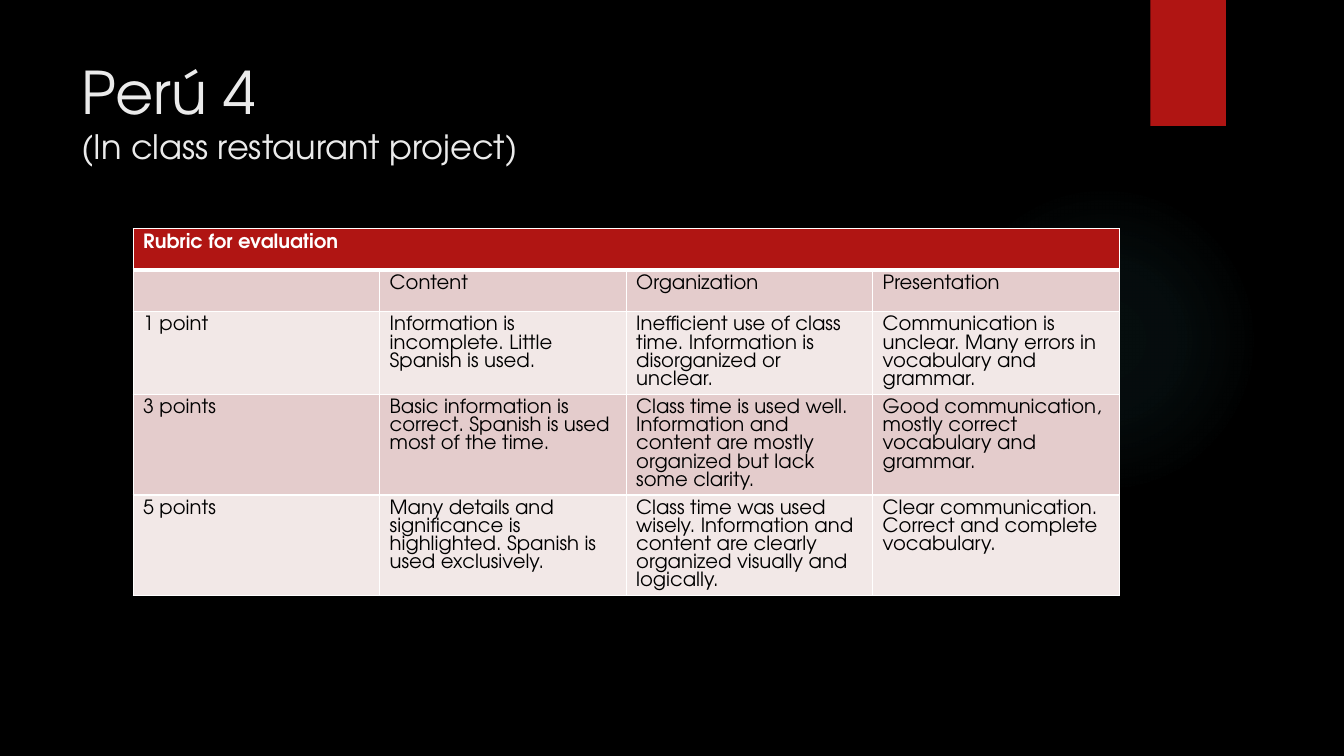
from lxml import etree
from pptx import Presentation
from pptx.dml.color import RGBColor
from pptx.enum.shapes import MSO_SHAPE
from pptx.enum.text import MSO_ANCHOR
from pptx.oxml import parse_xml
from pptx.oxml.ns import qn
from pptx.util import Inches, Pt

OVAL = MSO_SHAPE.OVAL
RECT = MSO_SHAPE.RECTANGLE
TOP = MSO_ANCHOR.TOP
FACE = "TeX Gyre Adventor"
NS = 'xmlns:a="http://schemas.openxmlformats.org/drawingml/2006/main"'
HUE = {"back": "000000", "glow": "50B9C1", "red": "B01513", "title": "EBEBEB",
       "white": "FFFFFF", "ink": "000000", "dark": "E4CCCC", "light": "F2E8E7"}


def rgb(name):
    return RGBColor.from_string(HUE[name])


def style(font, tint, form):
    font.color.rgb = rgb(tint)
    for key, val in form.items():
        setattr(font, key, val)


deck = Presentation()
deck.slide_width = Inches(13.33)
deck.slide_height = Inches(7.5)
slide = deck.slides.add_slide(deck.slide_layouts[6])
slide.background.fill.solid()
slide.background.fill.fore_color.rgb = rgb("back")

glow = slide.shapes.add_shape(OVAL, Inches(9.41), Inches(1.83), Inches(3.08), Inches(3.08))
glow.shadow.inherit = False
glow.line.fill.background()
stops = "".join(
    f'<a:gs pos="{pos}000"><a:srgbClr val="{HUE["glow"]}"><a:alpha val="{alpha}000"/></a:srgbClr></a:gs>'
    for pos, alpha in [(0, 7), (36, 6), (69, 0)])
grad = parse_xml(
    f'<a:gradFill {NS} rotWithShape="1"><a:gsLst>{stops}</a:gsLst><a:path path="circle">'
    '<a:fillToRect l="50000" t="50000" r="50000" b="50000"/></a:path></a:gradFill>')
glow._element.spPr.find(qn("a:prstGeom")).addnext(grad)

flag = slide.shapes.add_shape(RECT, Inches(11.41), 0, Inches(0.75), Inches(1.25))
flag.shadow.inherit = False
flag.fill.solid()
flag.fill.fore_color.rgb = rgb("red")
flag.line.fill.background()
shade = etree.SubElement(flag._element.spPr.find(qn("a:effectLst")), qn("a:outerShdw"),
                         blurRad=str(Pt(3)), dist=str(Pt(2)), dir="5400000", rotWithShape="0")
tone = etree.SubElement(shade, qn("a:srgbClr"), val=HUE["back"])
etree.SubElement(tone, qn("a:alpha"), val="45000")

title = slide.shapes.add_textbox(Inches(0.71), Inches(0.5), Inches(10.29), Inches(1.53))
frame = title.text_frame
frame.word_wrap = True
frame.vertical_anchor = TOP
head = frame.paragraphs[0]
for text, size in [("Perú 4", 42), ("(In class restaurant project)", 24)]:
    if head.runs:
        head.add_line_break()
    run = head.add_run()
    run.text = text
    style(run.font, "title", {"name": FACE, "size": Pt(size)})

rows = [
    ["Rubric for evaluation", "", "", ""],
    ["", "Content", "Organization", "Presentation"],
    ["1 point",
     "Information is incomplete. Little Spanish is used.",
     "Inefficient use of class time. Information is disorganized or unclear.",
     "Communication is unclear. Many errors in vocabulary and grammar."],
    ["3 points",
     "Basic information is correct. Spanish is used most of the time.",
     "Class time is used well. Information and content are mostly organized but lack some clarity.",
     "Good communication, mostly correct vocabulary and grammar."],
    ["5 points",
     "Many details and significance is highlighted. Spanish is used exclusively.",
     "Class time was used wisely. Information and content are clearly organized visually and logically.",
     "Clear communication. Correct and complete vocabulary."],
]
highs = [0.41, 0.41, 0.82, 1, 1]
grid = slide.shapes.add_table(len(rows), 4, Inches(1.32), Inches(2.27),
                              Inches(9.78), Inches(sum(highs))).table
for r, (row, high) in enumerate(zip(rows, highs)):
    grid.rows[r].height = Inches(high)
    fill = "red" if r == 0 else "dark" if r % 2 else "light"
    for c, text in enumerate(row):
        cell = grid.cell(r, c)
        cell.text = text
        para = cell.text_frame.paragraphs[0]
        para.line_spacing = Pt(12.95)
        style(para.font, "ink" if r else "white",
              {"name": FACE, "size": Pt(14), "bold": r == 0})
        cell.fill.solid()
        cell.fill.fore_color.rgb = rgb(fill)
        wide = {"L": 1, "R": 1, "T": 3 if r == 1 else 1, "B": 1 if r else 3}
        for n, (side, size) in enumerate(wide.items()):
            edge = parse_xml(
                f'<a:ln{side} {NS} w="{Pt(size)}"><a:solidFill>'
                f'<a:srgbClr val="{HUE["white"]}"/></a:solidFill></a:ln{side}>')
            cell._tc.tcPr.insert(n, edge)
grid.cell(0, 0).merge(grid.cell(0, 3))

deck.save("out.pptx")
